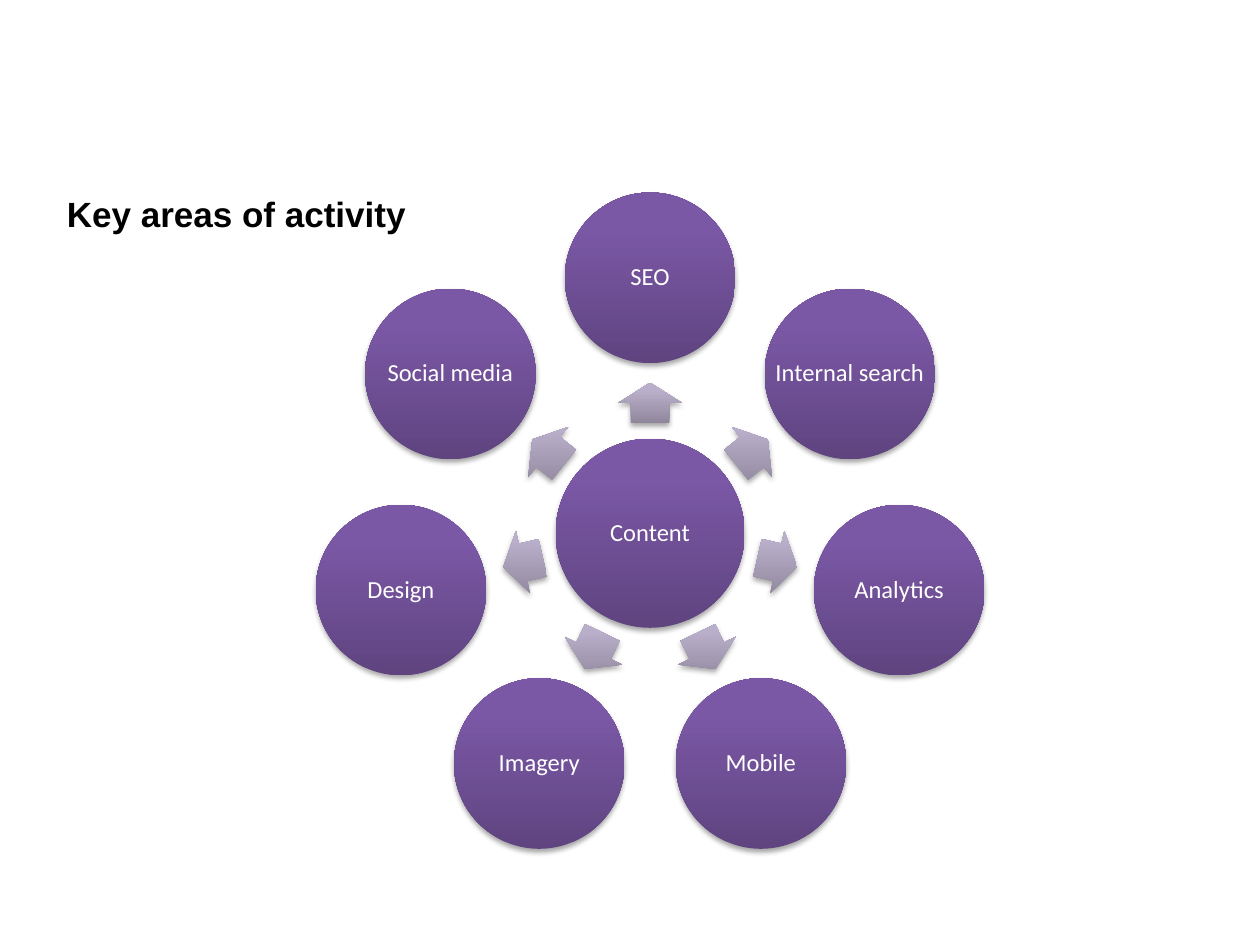
"""Build a slide with a content hub and seven radiating activity areas."""
import math
from dataclasses import dataclass

import pptx
import pptx.dml.color
import pptx.enum.shapes
import pptx.enum.text
import pptx.oxml
import pptx.oxml.ns
import pptx.util

Pt = pptx.util.Pt
Shapes = pptx.enum.shapes.MSO_SHAPE
Align = pptx.enum.text.PP_ALIGN
Anchor = pptx.enum.text.MSO_ANCHOR
qn = pptx.oxml.ns.qn

HUB_X, HUB_Y = 371.5, 304.75
HUB_SIZE, AREA_SIZE = 108, 97.5
AREA_RADIUS, ARROW_RADIUS = 146, 74.5
ARROW_WIDTH, ARROW_HEIGHT = 23.2, 36.6
CIRCLE_STOPS = ((0, "5F4480"), (80, "7B58A6"), (100, "7C57A8"))
ARROW_STOPS = ((0, "8F869C"), (80, "BAAFCB"), (100, "BAAFCC"))
AREAS = ("SEO", "Internal search", "Analytics", "Mobile", "Imagery", "Design", "Social media")


@dataclass
class Spoke:
    """An activity area and its clockwise angle from the rightward axis."""

    label: str
    angle: float

    def point(self, radius: float) -> tuple[float, float]:
        """Return the position on this spoke at a distance from the hub."""
        turn = math.radians(self.angle)
        return HUB_X + radius * math.cos(turn), HUB_Y + radius * math.sin(turn)


def color(value: str) -> pptx.dml.color.RGBColor:
    """Turn a hex string into a colour."""
    return pptx.dml.color.RGBColor.from_string(value)


def style(shape, stops: tuple) -> None:
    """Give a shape an upright gradient, a soft shadow and no outline."""
    shape.fill.background()
    shape.line.fill.background()
    shape.shadow.inherit = False
    properties = shape._element.spPr
    namespace = pptx.oxml.ns.nsdecls("a")
    stop_xml = "".join(
        f'<a:gs pos="{position * 1000}"><a:srgbClr val="{value}"/></a:gs>'
        for position, value in stops
    )
    gradient = pptx.oxml.parse_xml(
        f'<a:gradFill {namespace} rotWithShape="0"><a:gsLst>{stop_xml}</a:gsLst>'
        '<a:lin ang="16200000" scaled="0"/></a:gradFill>'
    )
    shadow = pptx.oxml.parse_xml(
        f'<a:outerShdw {namespace} blurRad="{Pt(3.1)}" dist="{Pt(1.8)}" dir="5400000" '
        'rotWithShape="0"><a:srgbClr val="000000"><a:alpha val="35000"/></a:srgbClr>'
        "</a:outerShdw>"
    )
    properties.replace(properties.find(qn("a:noFill")), gradient)
    properties.find(qn("a:effectLst")).append(shadow)


def add_centered(page, kind, center: tuple[float, float], width: float, height: float):
    """Add a preset shape around a center point."""
    left, top = center[0] - width / 2, center[1] - height / 2
    return page.shapes.add_shape(kind, Pt(left), Pt(top), Pt(width), Pt(height))


def add_circle(page, label: str, center: tuple[float, float], size: float) -> None:
    """Add a labelled circle."""
    circle = add_centered(page, Shapes.OVAL, center, size, size)
    style(circle, CIRCLE_STOPS)
    frame = circle.text_frame
    frame.word_wrap = False
    frame.vertical_anchor = Anchor.MIDDLE
    frame.margin_left = frame.margin_right = Pt(1.4)
    frame.margin_top = frame.margin_bottom = Pt(1.4)
    frame.text = label
    para = frame.paragraphs[0]
    para.alignment = Align.CENTER
    para.line_spacing = 0.9
    para.font.name = "Calibri"
    para.font.size = Pt(14)
    para.font.color.rgb = color("FFFFFF")


def add_arrow(page, spoke: Spoke) -> None:
    """Add an arrow pointing outward along a spoke."""
    arrow = add_centered(
        page, Shapes.RIGHT_ARROW, spoke.point(ARROW_RADIUS), ARROW_WIDTH, ARROW_HEIGHT
    )
    arrow.adjustments[0] = 0.6
    arrow.adjustments[1] = 0.5
    arrow.rotation = spoke.angle % 360
    style(arrow, ARROW_STOPS)


def add_title(page, text: str) -> None:
    """Place and format the slide title."""
    title = page.shapes.title
    title.left, title.top, title.width, title.height = Pt(31), Pt(77), Pt(460), Pt(90)
    title.text_frame.text = text
    title.text_frame.vertical_anchor = Anchor.MIDDLE
    para = title.text_frame.paragraphs[0]
    para.alignment = Align.LEFT
    para.font.name = "Arial"
    para.font.size = Pt(20)
    para.font.bold = True
    para.font.color.rgb = color("000000")


def main() -> None:
    """Build and save the deck."""
    deck = pptx.Presentation()
    deck.slide_width, deck.slide_height = Pt(720), Pt(540)
    page = deck.slides.add_slide(deck.slide_layouts[5])
    add_title(page, "Key areas of activity")
    add_circle(page, "Content", (HUB_X, HUB_Y), HUB_SIZE)
    for index, label in enumerate(AREAS):
        spoke = Spoke(label, index * 360 / len(AREAS) - 90)
        add_arrow(page, spoke)
        add_circle(page, spoke.label, spoke.point(AREA_RADIUS), AREA_SIZE)
    deck.save("out.pptx")


if __name__ == "__main__":
    main()
